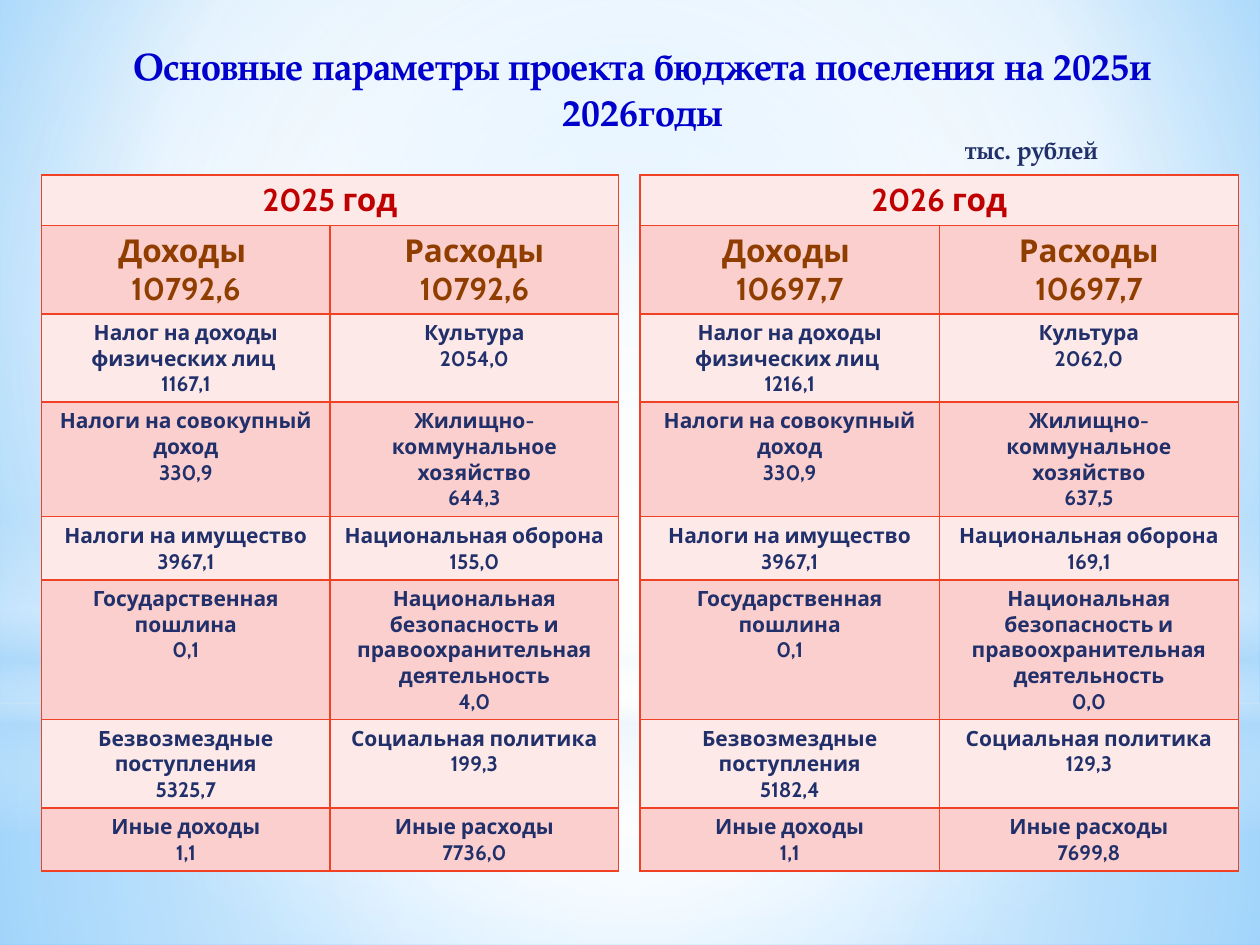
from pptx import Presentation
from pptx.dml.color import RGBColor
from pptx.enum.shapes import MSO_SHAPE
from pptx.enum.text import MSO_ANCHOR, PP_ALIGN
from pptx.oxml import parse_xml
from pptx.oxml.ns import nsdecls, qn
from pptx.util import Inches, Pt

BLUE = RGBColor(0x00, 0x00, 0xCC)
NAVY = RGBColor(0x21, 0x30, 0x6A)
RED = RGBColor(0xC0, 0x00, 0x00)
BROWN = RGBColor(0x90, 0x3E, 0x00)
EDGE = RGBColor(0xF1, 0x41, 0x24)
PALE = RGBColor(0xFC, 0xE9, 0xE8)
PINK = RGBColor(0xFA, 0xCF, 0xCD)
WHITE = RGBColor(0xFF, 0xFF, 0xFF)
SKY = RGBColor(0xB4, 0xDC, 0xFA)
LIGHT = RGBColor(0x9E, 0xD5, 0xFF)
DEEP = RGBColor(0x5B, 0xB9, 0xFF)

SERIF = "TeX Gyre Pagella"
SANS = "Cabin"
MID = (50, 50, 50, 50)

ROWS = (0.4, 0.7, 0.7, 0.91, 0.5, 1.11, 0.7, 0.5)
NAMES = (
    ("Доходы ", "Расходы"),
    ("Налог на доходы физических лиц ", "Культура"),
    ("Налоги на совокупный доход", "Жилищно-коммунальное хозяйство"),
    ("Налоги на имущество", "Национальная оборона"),
    ("Государственная пошлина",
     "Национальная безопасность и правоохранительная деятельность"),
    ("Безвозмездные поступления", "Социальная политика"),
    ("Иные доходы", "Иные расходы"),
)
SUMS_2025 = (
    ("10792,6", "10792,6"), ("1167,1", "2054,0"), ("330,9", "644,3"),
    ("3967,1", "155,0"), ("0,1", "4,0"), ("5325,7", "199,3"), ("1,1", "7736,0"),
)
SUMS_2026 = (
    ("10697,7", "10697,7"), ("1216,1", "2062,0"), ("330,9", "637,5"),
    ("3967,1", "169,1"), ("0,1", "0,0"), ("5182,4", "129,3"), ("1,1", "7699,8"),
)


def shade(fill, owner, stops, rect=None):
    """Fill with a gradient, round if a centre rect is given, else vertical."""
    fill.gradient()
    old = owner.find(".//" + qn("a:gradFill"))
    marks = "".join(
        f'<a:gs pos="{pos * 1000}"><a:srgbClr val="{color}">'
        f'<a:alpha val="{alpha * 1000}"/></a:srgbClr></a:gs>'
        for pos, color, alpha in stops)
    if rect:
        sides = " ".join(f'{k}="{v * 1000}"' for k, v in zip("ltrb", rect))
        kind = f'<a:path path="circle"><a:fillToRect {sides}/></a:path>'
    else:
        kind = '<a:lin ang="5400000" scaled="0"/>'
    new = parse_xml(f'<a:gradFill {nsdecls("a")} rotWithShape="1">'
                    f'<a:gsLst>{marks}</a:gsLst>{kind}</a:gradFill>')
    old.getparent().replace(old, new)


def add_glow(slide, form, top, height, stops, rect=None):
    """Add a full-width soft background shape."""
    shape = slide.shapes.add_shape(
        form, 0, Inches(top), Inches(10), Inches(height))
    shape.shadow.inherit = False
    shape.line.fill.background()
    shade(shape.fill, shape.element, stops, rect)


def style(frame, face, size, color, align=PP_ALIGN.CENTER):
    """Format every paragraph and run of a text frame."""
    for para in frame.paragraphs:
        para.alignment = align
        for run in para.runs:
            run.font.name = face
            run.font.size = Pt(size)
            run.font.bold = True
            run.font.color.rgb = color


def paint_cell(cell, color):
    """Give a cell its borders and fill."""
    props = cell._tc.get_or_add_tcPr()
    for side in ("lnL", "lnR", "lnT", "lnB"):
        props.append(parse_xml(
            f'<a:{side} {nsdecls("a")} w="12700"><a:solidFill>'
            f'<a:srgbClr val="{EDGE}"/></a:solidFill></a:{side}>'))
    cell.fill.solid()
    cell.fill.fore_color.rgb = color


def add_budget(slide, left, width, year, sums):
    """Add the income and spending table of one year."""
    table = slide.shapes.add_table(
        len(ROWS), 2, Inches(left), Inches(1.39),
        Inches(width), Inches(sum(ROWS))).table
    for row, height in enumerate(ROWS):
        table.rows[row].height = Inches(height)
        for col in range(2):
            paint_cell(table.cell(row, col), PINK if row % 2 else PALE)
    head = table.cell(0, 0)
    head.merge(table.cell(0, 1))
    head.text_frame.text = year
    style(head.text_frame, SANS, 18, RED)
    for row, (names, values) in enumerate(zip(NAMES, sums), 1):
        size, color = (18, BROWN) if row == 1 else (12, NAVY)
        for col, pair in enumerate(zip(names, values)):
            frame = table.cell(row, col).text_frame
            frame.text = "\n".join(pair)
            style(frame, SANS, size, color)


def add_back(slide):
    """Paint the background and its glows."""
    shade(slide.background.fill, slide.element,
          [(0, LIGHT, 100), (60, WHITE, 100), (100, DEEP, 100)],
          (20, 10, 20, 60))
    add_glow(slide, MSO_SHAPE.RECTANGLE, 5.58, 1.92,
             [(0, WHITE, 91), (37, WHITE, 76), (100, SKY, 79)], MID)
    add_glow(slide, MSO_SHAPE.RECTANGLE, 0, 5.58,
             [(0, WHITE, 89), (48, WHITE, 62), (100, SKY, 79)], MID)
    add_glow(slide, MSO_SHAPE.RECTANGLE, 4.12, 2.5,
             [(0, WHITE, 0), (29, WHITE, 30), (45, SKY, 40),
              (55, WHITE, 26), (65, SKY, 60), (100, WHITE, 0)])
    add_glow(slide, MSO_SHAPE.OVAL, 1.75, 5.58,
             [(0, WHITE, 100), (56, WHITE, 0)], MID)


def add_title(slide):
    """Set the title and the unit note under it."""
    title = slide.shapes.title
    title.element.getparent().append(title.element)
    title.left, title.top = Inches(0.35), Inches(0.29)
    title.width, title.height = Inches(9.5), Inches(0.8)
    frame = title.text_frame
    frame.text = "Основные параметры проекта бюджета поселения на 2025и 2026годы"
    frame.vertical_anchor = MSO_ANCHOR.TOP
    style(frame, SERIF, 21.6, BLUE)
    note = slide.shapes.add_textbox(
        Inches(7.3), Inches(1.02), Inches(1.51), Inches(0.34)).text_frame
    note.word_wrap = True
    note.text = "тыс. рублей"
    style(note, SERIF, 14.4, NAVY, PP_ALIGN.RIGHT)


def main():
    """Build the budget slide."""
    deck = Presentation()
    deck.slide_width, deck.slide_height = Inches(10), Inches(7.5)
    slide = deck.slides.add_slide(deck.slide_layouts[5])
    add_back(slide)
    add_title(slide)
    add_budget(slide, 0.33, 4.58, "2025 год", SUMS_2025)
    add_budget(slide, 5.08, 4.75, "2026 год", SUMS_2026)
    deck.save("out.pptx")


if __name__ == "__main__":
    main()
